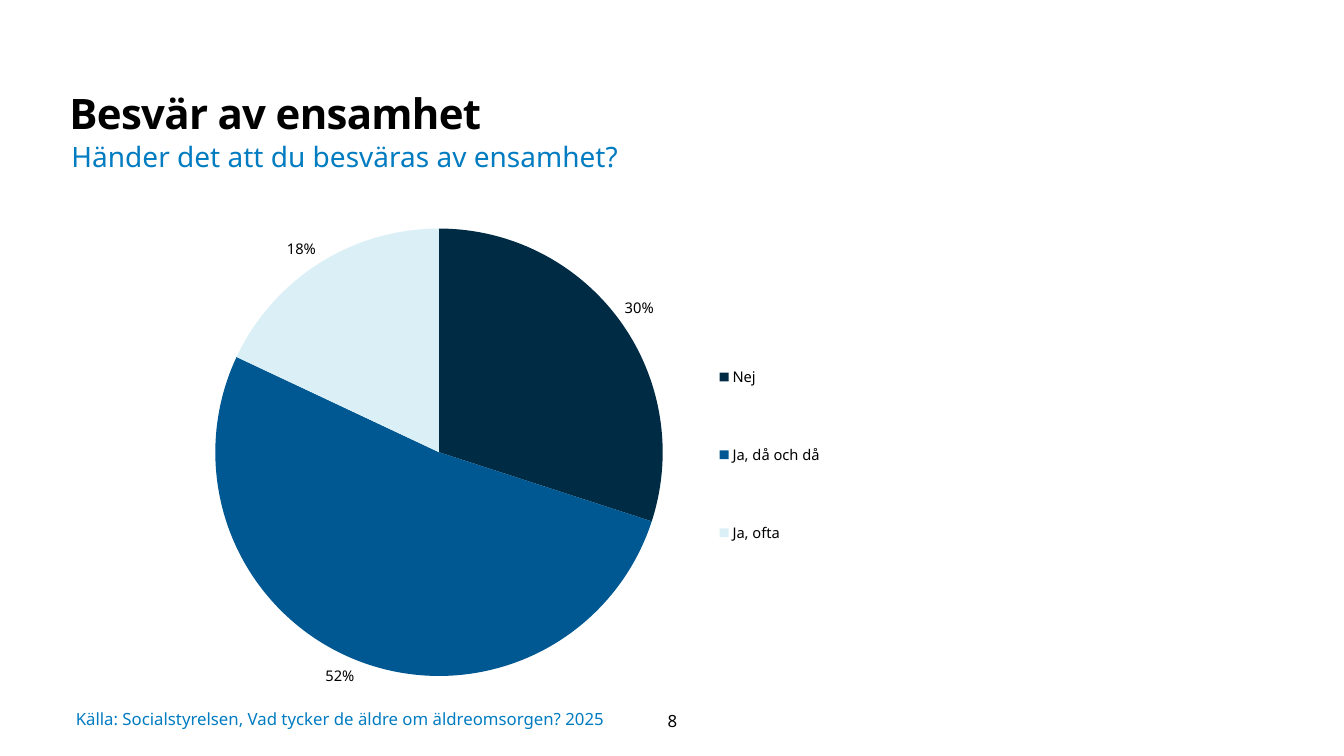
import pptx
import pptx.chart.data
import pptx.dml.color
import pptx.enum.chart
import pptx.enum.text
import pptx.oxml
import pptx.oxml.ns
import pptx.util
from pptx.util import Cm, Pt

FONT = "Noto Sans"
BLACK = pptx.dml.color.RGBColor(0x00, 0x00, 0x00)
BLUE = pptx.dml.color.RGBColor(0x01, 0x7C, 0xC1)
NAVY = pptx.dml.color.RGBColor(0x00, 0x2B, 0x45)
MID_BLUE = pptx.dml.color.RGBColor(0x00, 0x58, 0x92)
PALE_BLUE = pptx.dml.color.RGBColor(0xDB, 0xF0, 0xF6)


def style_font(font, size, color):
    font.name = FONT
    font.size = Pt(size)
    font.color.rgb = color


def layout_element(x, y, width, height, target=""):
    """Return a manual chart layout; lengths are fractions of the chart."""
    return pptx.oxml.parse_xml(
        f'<c:layout {pptx.oxml.ns.nsdecls("c")}><c:manualLayout>{target}'
        '<c:xMode val="edge"/><c:yMode val="edge"/>'
        f'<c:x val="{x}"/><c:y val="{y}"/><c:w val="{width}"/><c:h val="{height}"/>'
        '</c:manualLayout></c:layout>'
    )


presentation = pptx.Presentation()
presentation.slide_width = Cm(33.87)
presentation.slide_height = Cm(19.05)
slide = presentation.slides.add_slide(presentation.slide_layouts[5])

# Title
title = slide.shapes.title
title.left, title.top, title.width, title.height = Cm(1.75), Cm(2.08), Cm(27), Cm(1.63)
title_frame = title.text_frame
title_frame.text = "Besvär av ensamhet"
title_frame.auto_size = pptx.enum.text.MSO_AUTO_SIZE.NONE
title_frame.vertical_anchor = pptx.enum.text.MSO_ANCHOR.TOP
title_frame.margin_left = title_frame.margin_top = 0
title_frame.margin_right, title_frame.margin_bottom = Cm(0.25), Cm(0.13)
title_paragraph = title_frame.paragraphs[0]
title_paragraph.alignment = pptx.enum.text.PP_ALIGN.LEFT
title_paragraph.line_spacing = 1.1
title_run = title_paragraph.runs[0]
style_font(title_run.font, 30, BLACK)
title_run.font.bold = True
title_run.font._element.set("spc", "-50")

# Pie chart
chart_data = pptx.chart.data.CategoryChartData()
chart_data.categories = ["Nej", "Ja, då och då", "Ja, ofta"]
chart_data.add_series("Series 1", (30, 52, 18))
chart = slide.shapes.add_chart(
    pptx.enum.chart.XL_CHART_TYPE.PIE, Cm(3.43), Cm(5), Cm(20.09), Cm(12.67), chart_data
).chart
chart.has_title = False
style_font(chart.font, 10, BLACK)

plot = chart.plots[0]
plot.vary_by_categories = True
for index, color in enumerate((NAVY, MID_BLUE, PALE_BLUE)):
    fill = plot.series[0].points[index].format.fill
    fill.solid()
    fill.fore_color.rgb = color

plot.has_data_labels = True
labels = plot.data_labels
labels.show_percentage = True
labels.show_value = False
labels.number_format = "0%"
labels.number_format_is_linked = False
labels.position = pptx.enum.chart.XL_LABEL_POSITION.OUTSIDE_END
style_font(labels.font, 10.5, BLACK)

chart.has_legend = True
legend = chart.legend
legend.position = pptx.enum.chart.XL_LEGEND_POSITION.RIGHT
legend.include_in_layout = False
style_font(legend.font, 10.5, BLACK)

plot_area = chart._chartSpace.chart.plotArea
for old_layout in plot_area.findall(pptx.oxml.ns.qn("c:layout")):
    plot_area.remove(old_layout)
plot_area.insert(0, layout_element(0.09, 0.06, 0.58, 0.89, '<c:layoutTarget val="inner"/>'))
legend_element = legend._element
for old_layout in legend_element.findall(pptx.oxml.ns.qn("c:layout")):
    legend_element.remove(old_layout)
legend_element.find(pptx.oxml.ns.qn("c:legendPos")).addnext(
    layout_element(0.72, 0.22, 0.15, 0.58)
)

# Subtitle, source and page number
LEFT, CENTER = pptx.enum.text.PP_ALIGN.LEFT, pptx.enum.text.PP_ALIGN.CENTER
TOP, MIDDLE = pptx.enum.text.MSO_ANCHOR.TOP, pptx.enum.text.MSO_ANCHOR.MIDDLE
text_boxes = [
    ("Händer det att du besväras av ensamhet?",
     (1.55, 3.38, 26.16, 1.12), 20, BLUE, LEFT, TOP, (0.25, 0.13)),
    ("Källa: Socialstyrelsen, Vad tycker de äldre om äldreomsorgen? 2025",
     (1.91, 17.75, 15.01, 0.74), 12, BLUE, LEFT, MIDDLE, (0, 0)),
    ("8", (15.65, 17.65, 2.59, 1.02), 12, BLACK, CENTER, MIDDLE, (0.25, 0.13)),
]
for text, box, size, color, alignment, anchor, (side_margin, end_margin) in text_boxes:
    frame = slide.shapes.add_textbox(*map(Cm, box)).text_frame
    frame.word_wrap = True
    frame.vertical_anchor = anchor
    frame.margin_left = frame.margin_right = Cm(side_margin)
    frame.margin_top = frame.margin_bottom = Cm(end_margin)
    frame.text = text
    paragraph = frame.paragraphs[0]
    paragraph.alignment = alignment
    style_font(paragraph.runs[0].font, size, color)

presentation.save("out.pptx")
